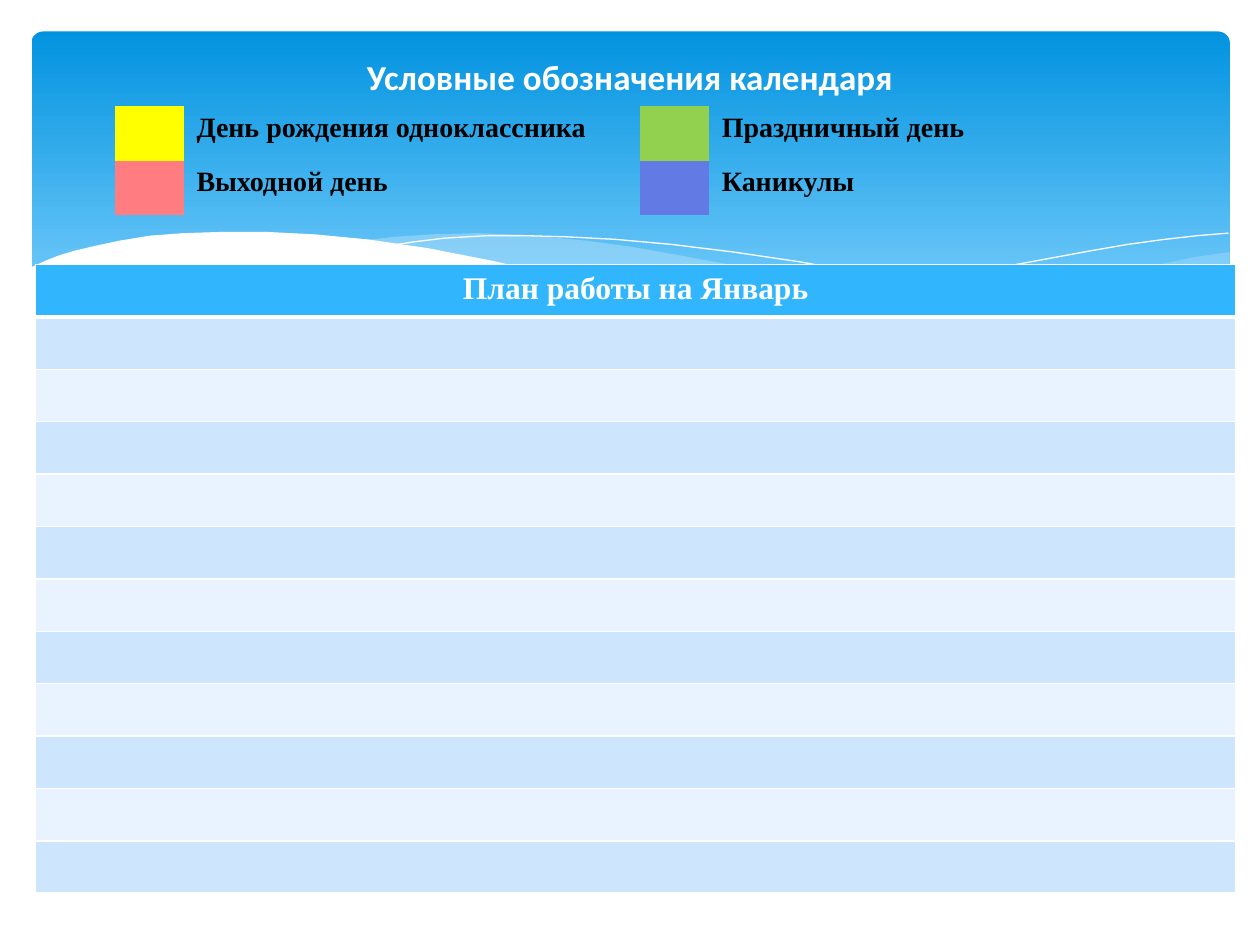
from lxml import etree
from pptx import Presentation
from pptx.dml.color import RGBColor
from pptx.enum.shapes import MSO_SHAPE
from pptx.enum.text import MSO_ANCHOR, PP_ALIGN
from pptx.oxml.ns import qn
from pptx.util import Inches, Pt

ROUNDED = MSO_SHAPE.ROUNDED_RECTANGLE
MIDDLE = MSO_ANCHOR.MIDDLE
CENTER = PP_ALIGN.CENTER
NO_STYLE = "{2D5ABB26-0587-4C30-8999-92F81FD0307C}"

COLORS = {
    "white": "FFFFFF", "black": "000000", "sky_top": "0293E0", "sky_bottom": "83D3FE",
    "mist": "C6E7FC", "birthday": "FFFF00", "holiday": "92D050", "day_off": "FF7C80",
    "vacation": "627BE4", "plan_header": "31B6FD", "band_dark": "CEE5FE", "band_light": "E8F3FF",
}
TITLE = "Условные обозначения календаря"
LEGEND = [
    [("birthday", "День рождения одноклассника"), ("holiday", "Праздничный день")],
    [("day_off", "Выходной день"), ("vacation", "Каникулы")],
]
LEGEND_WIDTHS = [0.55, 3.62, 0.55, 3.86]
PLAN_TITLE = "План работы на Январь"
PLAN_ROWS = 12
RIGHT_MIST = [
    (9.76, 2), (9.48, 2.04), (9.06, 2.13), (8.61, 2.23), (8.05, 2.37), (7.53, 2.48),
    (7.06, 2.57), (6.61, 2.65), (7.05, 2.71), (7.57, 2.76), (8.03, 2.78), (8.44, 2.77),
    (8.81, 2.73), (9.13, 2.67), (9.42, 2.59), (9.76, 2.47),
]
MIDDLE_MIST = [
    (8.93, 2.73), (8.37, 2.65), (7.75, 2.54), (7.06, 2.4), (6.29, 2.22), (5.84, 2.11),
    (5.41, 2.03), (5.02, 1.96), (4.65, 1.91), (4.2, 1.87), (3.8, 1.85), (3.44, 1.86),
    (3.13, 1.88), (2.86, 1.91), (3.23, 1.96), (3.62, 2.03), (4.04, 2.11), (4.49, 2.22),
    (5.3, 2.4), (6.01, 2.55), (6.65, 2.66), (7.22, 2.74), (7.73, 2.77), (8.28, 2.78),
]
LEFT_CURVE = [
    (3.09, 1.95), (3.28, 1.92), (3.53, 1.89), (3.87, 1.87), (4.16, 1.87), (4.5, 1.88),
    (4.89, 1.9), (5.33, 1.94), (5.82, 2), (6.36, 2.08), (6.95, 2.19), (7.6, 2.33),
    (8.31, 2.51), (9.07, 2.72),
]
RIGHT_CURVE = [
    (6.13, 2.57), (6.53, 2.46), (6.95, 2.35), (7.48, 2.23), (8.06, 2.1), (8.66, 1.99),
    (8.95, 1.94), (9.24, 1.9), (9.51, 1.87), (9.75, 1.85),
]
WHITE_WAVE = [
    (9.77, 2.46), (9.5, 2.56), (9.2, 2.65), (8.87, 2.71), (8.5, 2.75), (8.09, 2.77),
    (7.61, 2.75), (7.08, 2.7), (6.48, 2.62), (5.79, 2.5), (5.03, 2.33), (4.47, 2.2),
    (3.91, 2.07), (3.4, 1.97), (2.92, 1.9), (2.5, 1.86), (2.11, 1.84), (1.77, 1.84),
    (1.46, 1.85), (1.19, 1.87), (0.95, 1.91), (0.76, 1.95), (0.59, 1.99), (0.46, 2.03),
    (0.36, 2.07), (0.23, 2.13), (0.23, 3.29), (9.77, 3.29),
]
WAVES = [
    (RIGHT_MIST, "mist", 29), (MIDDLE_MIST, "mist", 40), (LEFT_CURVE, None, 100),
    (RIGHT_CURVE, None, 100), (WHITE_WAVE, "white", 100),
]


def rgb(name):
    """Return the named colour."""
    return RGBColor.from_string(COLORS[name])


def write(holder, text, font_name, size, color, alignment=None):
    """Put one bold paragraph into a cell or shape."""
    holder.text_frame.text = text
    paragraph = holder.text_frame.paragraphs[0]
    paragraph.alignment = alignment
    font = paragraph.runs[0].font
    font.name, font.size, font.bold = font_name, Pt(size), True
    font.color.rgb = rgb(color)


def add_header(slide):
    """Draw the rounded gradient panel."""
    panel = slide.shapes.add_shape(ROUNDED, Inches(0.25), Inches(0.25), Inches(9.51), Inches(2.7))
    panel.adjustments[0] = 0.034
    panel.shadow.inherit = False
    panel.line.fill.background()
    panel.fill.gradient()
    panel.fill.gradient_angle = 270
    for stop, color, position in zip(panel.fill.gradient_stops, ("sky_top", "sky_bottom"), (0, 0.9)):
        stop.color.rgb = rgb(color)
        stop.position = position


def add_wave(slide, points, color, opacity):
    """Draw a filled wave, or an open white curve when there is no colour."""
    start, *rest = [(Inches(x), Inches(y)) for x, y in points]
    builder = slide.shapes.build_freeform(*start)
    builder.add_line_segments(rest, close=color is not None)
    wave = builder.convert_to_shape()
    wave.shadow.inherit = False
    if color is None:
        wave.fill.background()
        wave.line.color.rgb = rgb("white")
        wave.line.width = Pt(0)
        return
    wave.line.fill.background()
    wave.fill.solid()
    wave.fill.fore_color.rgb = rgb(color)
    if opacity < 100:
        color_element = wave.element.spPr.find(".//" + qn("a:srgbClr"))
        etree.SubElement(color_element, qn("a:alpha"), val=str(opacity * 1000))


def add_plain_table(slide, rows, widths, left, top, height):
    """Add a table without a built-in style."""
    frame = slide.shapes.add_table(
        rows, len(widths), Inches(left), Inches(top), Inches(sum(widths)), Inches(height))
    table = frame.table
    table.first_row = table.horz_banding = False
    frame.element.find(".//" + qn("a:tableStyleId")).text = NO_STYLE
    for column, width in zip(table.columns, widths):
        column.width = Inches(width)
    return table


def fill_cell(cell, color):
    """Fill a cell with a named colour."""
    cell.fill.solid()
    cell.fill.fore_color.rgb = rgb(color)


def set_borders(cell, top, bottom):
    """Give a cell white borders, with top and bottom widths in points."""
    properties = cell.fill._xPr
    for index, (side, width) in enumerate((("L", 1), ("R", 1), ("T", top), ("B", bottom))):
        line = etree.Element(qn("a:ln" + side), w=str(Pt(width)))
        solid = etree.SubElement(line, qn("a:solidFill"))
        etree.SubElement(solid, qn("a:srgbClr"), val=COLORS["white"])
        properties.insert(index, line)


def add_legend(slide):
    """Add the colour key."""
    table = add_plain_table(slide, len(LEGEND), LEGEND_WIDTHS, 0.91, 0.84, 0.87)
    for row, entries in enumerate(LEGEND):
        for pair, (color, label) in enumerate(entries):
            fill_cell(table.cell(row, 2 * pair), color)
            write(table.cell(row, 2 * pair + 1), label, "Times New Roman", 16, "black")


def add_plan(slide):
    """Add the banded monthly plan."""
    table = add_plain_table(slide, PLAN_ROWS, [9.53], 0.28, 2.1, 4.99)
    for row in range(PLAN_ROWS):
        cell = table.cell(row, 0)
        band = "band_dark" if row % 2 else "band_light"
        fill_cell(cell, band if row else "plan_header")
        set_borders(cell, 3 if row == 1 else 1, 1 if row else 3)
    write(table.cell(0, 0), PLAN_TITLE, "Times New Roman", 18, "white", CENTER)


def main():
    """Build the calendar slide."""
    presentation = Presentation()
    presentation.slide_width, presentation.slide_height = Inches(10), Inches(7.5)
    slide = presentation.slides.add_slide(presentation.slide_layouts[5])
    add_header(slide)
    for points, color, opacity in WAVES:
        add_wave(slide, points, color, opacity)
    title = slide.shapes.title
    title.left, title.top, title.width, title.height = map(Inches, (0.5, 0.37, 9, 0.47))
    write(title, TITLE, "Calibri", 20, "white", CENTER)
    title.text_frame.vertical_anchor = MIDDLE
    title.element.getparent().append(title.element)
    add_legend(slide)
    add_plan(slide)
    presentation.save("out.pptx")


if __name__ == "__main__":
    main()
